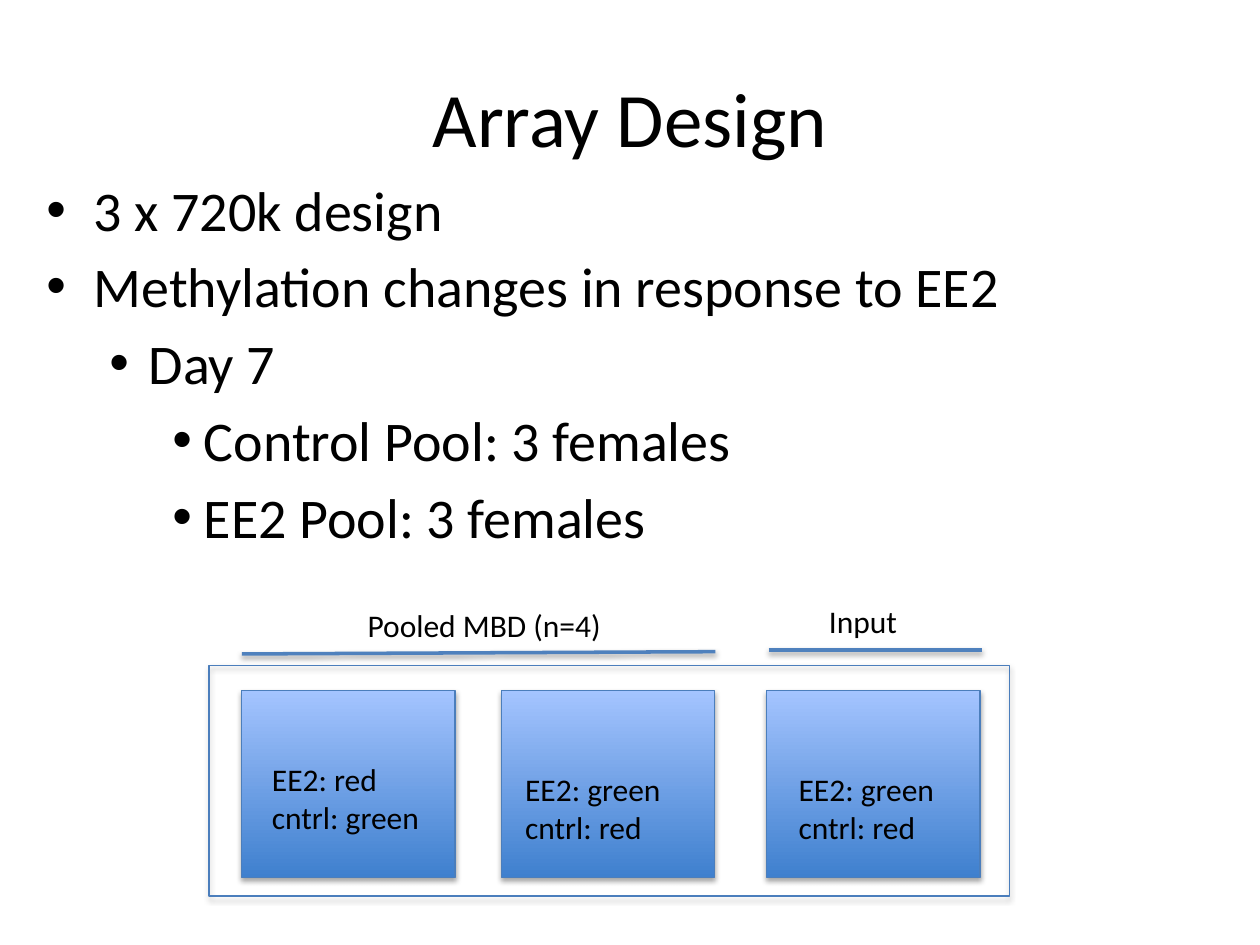
from dataclasses import dataclass
from typing import NamedTuple

from lxml.etree import SubElement
from pptx import Presentation
from pptx.dml.color import RGBColor as RGB
from pptx.enum.shapes import MSO_CONNECTOR as Connector, MSO_SHAPE as Preset
from pptx.enum.text import MSO_ANCHOR as Anchor, PP_ALIGN as Align
from pptx.oxml.ns import qn
from pptx.util import Pt


@dataclass(frozen=True)
class Theme:
    font: str = "Calibri"
    text: RGB = RGB(0x00, 0x00, 0x00)
    outline: RGB = RGB(0x4B, 0x7E, 0xBC)
    rule: RGB = RGB(0x4F, 0x81, 0xBD)
    gradient: tuple[RGB, RGB] = (RGB(0x3F, 0x80, 0xCE), RGB(0xA4, 0xC4, 0xFF))
    title_size: float = 44
    bullet_size: float = 32
    label_size: float = 18


class Box(NamedTuple):
    left: float
    top: float
    width: float
    height: float

    def lengths(self) -> list[Pt]:
        return [Pt(value) for value in self]


class Bullet(NamedTuple):
    text: str
    level: int = 0


class Indent(NamedTuple):
    margin: float
    hanging: float


class Subarray(NamedTuple):
    left: float
    label: Box
    text: str


class Group(NamedTuple):
    text: str
    label: Box
    start: tuple[float, float]
    end: tuple[float, float]


THEME = Theme()
TITLE = Box(36, 21.6, 648, 90)
BULLET_AREA = Box(19.4, 96.5, 764, 230)
ARRAY = Box(119.5, 380.2, 457.2, 131.8)
SUBARRAY_TOP, SUBARRAY_WIDTH, SUBARRAY_HEIGHT = 394.6, 121.9, 106.8
INDENTS = [Indent(27, 27), Indent(58.5, 22.5), Indent(90, 18)]
BULLETS = [
    Bullet("3 x 720k design"),
    Bullet("Methylation changes in response to EE2"),
    Bullet("Day 7", 1),
    Bullet("Control Pool: 3 females", 2),
    Bullet("EE2 Pool: 3 females", 2),
]
SUBARRAYS = [
    Subarray(138.2, Box(148.3, 430.6, 112.3, 72.7), "EE2: red\ncntrl: green"),
    Subarray(286.4, Box(293, 436.6, 115.2, 72.7), "EE2: green\ncntrl: red"),
    Subarray(438.2, Box(449.3, 436.6, 110.9, 72.7), "EE2: green\ncntrl: red"),
]
GROUPS = [
    Group("Pooled MBD (n=4)", Box(203, 342.7, 163.4, 51), (138.2, 373.7), (408.8, 372.4)),
    Group("Input", Box(466.6, 340.6, 115.2, 51), (439.2, 371.5), (561.4, 371.5)),
]


def format_text(text_frame, size: float) -> None:
    for paragraph in text_frame.paragraphs:
        for run in paragraph.runs:
            run.font.name = THEME.font
            run.font.size = Pt(size)
            run.font.color.rgb = THEME.text


def add_text(slide, box: Box, text: str, size: float):
    text_frame = slide.shapes.add_textbox(*box.lengths()).text_frame
    text_frame.word_wrap = True
    text_frame.text = text
    format_text(text_frame, size)
    return text_frame


def set_shadow(shape, opacity: int, distance: float) -> None:
    """Add a soft downward shadow; call after the line has been set."""
    effects = SubElement(shape._element.spPr, qn("a:effectLst"))
    shadow = SubElement(effects, qn("a:outerShdw"), blurRad=str(Pt(3.1)),
                        dist=str(Pt(distance)), dir="5400000", rotWithShape="0")
    color = SubElement(shadow, qn("a:srgbClr"), val=str(THEME.text))
    SubElement(color, qn("a:alpha"), val=str(opacity * 1000))


def add_title(slide, text: str) -> None:
    title = slide.shapes.title
    title.left, title.top, title.width, title.height = TITLE.lengths()
    title.text_frame.text = text
    title.text_frame.vertical_anchor = Anchor.MIDDLE
    title.text_frame.paragraphs[0].alignment = Align.CENTER
    format_text(title.text_frame, THEME.title_size)


def add_bullets(slide) -> None:
    text = "\n".join(bullet.text for bullet in BULLETS)
    text_frame = add_text(slide, BULLET_AREA, text, THEME.bullet_size)
    for paragraph, bullet in zip(text_frame.paragraphs, BULLETS):
        indent = INDENTS[bullet.level]
        paragraph.level = bullet.level
        paragraph.space_before = Pt(5.5)
        properties = paragraph._p.get_or_add_pPr()
        properties.set("marL", str(Pt(indent.margin)))
        properties.set("indent", str(-Pt(indent.hanging)))
        SubElement(properties, qn("a:buFont"), typeface="Arial")
        SubElement(properties, qn("a:buChar"), char="•")


def add_rectangle(slide, box: Box, filled: bool) -> None:
    shape = slide.shapes.add_shape(Preset.RECTANGLE, *box.lengths())
    if filled:
        shape.fill.gradient()
        shape.fill.gradient_angle = 90
        for position, (stop, color) in enumerate(zip(shape.fill.gradient_stops, THEME.gradient)):
            stop.position = position
            stop.color.rgb = color
    else:
        shape.fill.background()
    shape.line.color.rgb = THEME.outline
    shape.line.width = Pt(0.75)
    set_shadow(shape, opacity=35, distance=1.8)


def add_group(slide, group: Group) -> None:
    ends = [Pt(value) for value in (*group.start, *group.end)]
    connector = slide.shapes.add_connector(Connector.STRAIGHT, *ends)
    connector.line.color.rgb = THEME.rule
    connector.line.width = Pt(2)
    set_shadow(connector, opacity=38, distance=1.6)
    add_text(slide, group.label, group.text, THEME.label_size)


def main() -> None:
    presentation = Presentation()
    presentation.slide_width, presentation.slide_height = Pt(720), Pt(540)
    slide = presentation.slides.add_slide(presentation.slide_layouts.get_by_name("Title Only"))
    add_title(slide, "Array Design")
    add_bullets(slide)
    add_rectangle(slide, ARRAY, filled=False)
    for subarray in SUBARRAYS:
        box = Box(subarray.left, SUBARRAY_TOP, SUBARRAY_WIDTH, SUBARRAY_HEIGHT)
        add_rectangle(slide, box, filled=True)
        add_text(slide, subarray.label, subarray.text, THEME.label_size)
    for group in GROUPS:
        add_group(slide, group)
    presentation.save("out.pptx")


if __name__ == "__main__":
    main()
